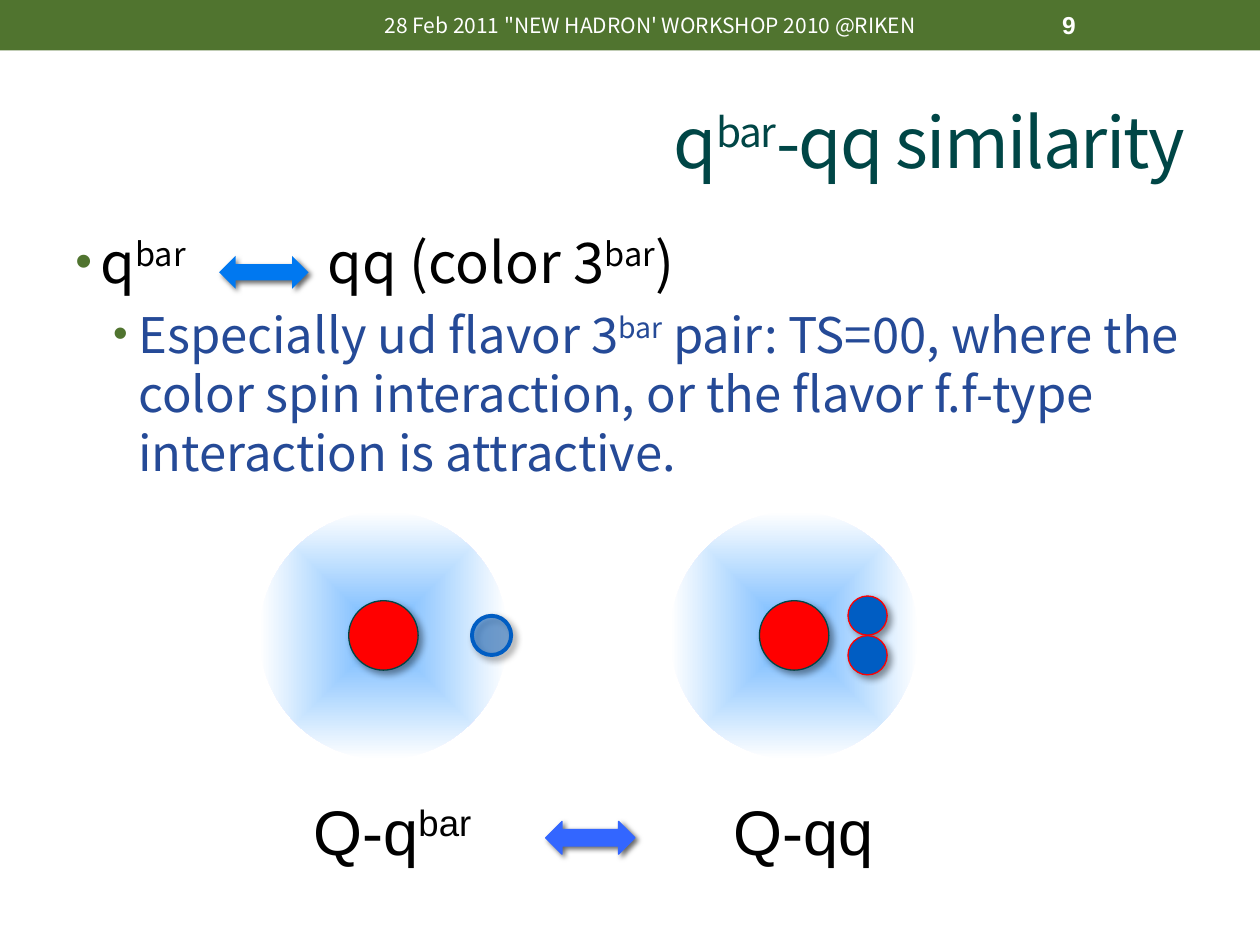
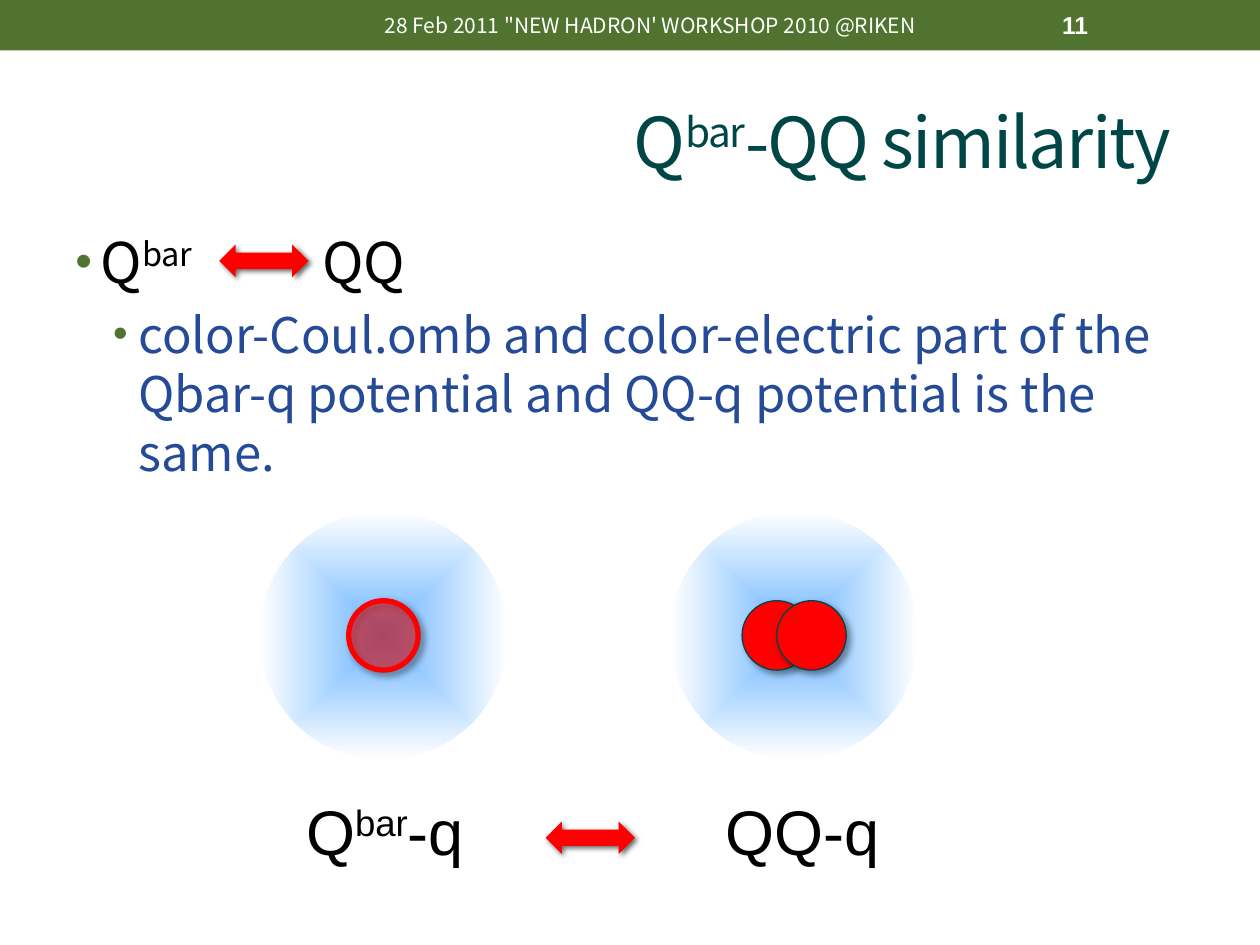
from dataclasses import dataclass

import pptx
import pptx.util
import pptx.dml.color
import pptx.enum.shapes
import pptx.enum.text
import pptx.oxml
import pptx.oxml.ns

Cm, Pt = pptx.util.Cm, pptx.util.Pt
SHAPE = pptx.enum.shapes.MSO_SHAPE
ALIGN = pptx.enum.text.PP_ALIGN
ANCHOR = pptx.enum.text.MSO_ANCHOR
DRAWING_NS = pptx.oxml.ns.nsdecls("a")
qn = pptx.oxml.ns.qn


@dataclass(frozen=True)
class Theme:
    text_font: str = "Noto Sans CJK JP"
    label_font: str = "Arial"
    green: str = "50742F"
    teal: str = "004646"
    navy: str = "254A97"
    black: str = "000000"
    white: str = "FFFFFF"
    halo: str = "69B4FF"
    heavy: str = "FF0000"
    light: str = "005DC3"
    sky: str = "0078F0"
    violet: str = "3366FF"
    title: int = 40
    topic: int = 32
    detail: int = 28
    label: int = 36
    footer: int = 12
    number: int = 14


THEME = Theme()
MEETING = "28 Feb 2011 \"NEW HADRON' WORKSHOP 2010 @RIKEN"
LEFT_SYSTEM, RIGHT_SYSTEM, SYSTEM_Y = 7.73, 16.01, 12.81
HALO_SIZE, HEAVY_SIZE, LIGHT_SIZE = 5, 1.4, 0.79
ARROW_SIZE = (1.8, 0.66)


def rgb(color):
    return pptx.dml.color.RGBColor.from_string(color)


def xml(markup):
    """Parse one DrawingML element; the first tag gets the namespace."""
    tag_end = min(i for i in (markup.find(" "), markup.find(">")) if i > 0)
    return pptx.oxml.parse_xml(f"{markup[:tag_end]} {DRAWING_NS}{markup[tag_end:]}")


# Text

def add_box(slide, left, top, width, height, anchor=ANCHOR.TOP):
    frame = slide.shapes.add_textbox(Cm(left), Cm(top), Cm(width), Cm(height)).text_frame
    frame.word_wrap = True
    frame.vertical_anchor = anchor
    return frame


def write(paragraph, text, size, color, font=THEME.text_font, bold=False, spacing=None):
    """Fill a paragraph; parts between ^ marks are raised."""
    for index, part in enumerate(text.split("^")):
        run = paragraph.add_run()
        run.text = part
        run.font.name, run.font.size, run.font.bold = font, Pt(size), bold
        run.font.color.rgb = rgb(color)
        properties = run.font._element
        if index % 2:
            properties.set("baseline", "30000")
        if spacing:
            properties.set("spc", str(spacing * 100))


def add_tab(paragraph, position):
    paragraph._p.get_or_add_pPr().append(
        xml(f'<a:tabLst ><a:tab pos="{Cm(position)}" algn="l"/></a:tabLst>'))


def add_bullet(paragraph, indent):
    properties = paragraph._p.get_or_add_pPr()
    properties.set("marL", str(Cm(indent)))
    properties.set("indent", str(-Cm(0.51)))
    for markup in (f'<a:buClr ><a:srgbClr val="{THEME.green}"/></a:buClr>',
                   '<a:buSzPct val="85000"/>',
                   '<a:buFont typeface="Arial"/>',
                   '<a:buChar char="•"/>'):
        properties.append(xml(markup))


def add_points(slide, topic, detail, topic_tab):
    frame = add_box(slide, 1.27, 4.45, 22.86, 13.54)
    first, second = frame.paragraphs[0], frame.add_paragraph()
    second.level = 1
    add_bullet(first, 0.51)
    add_bullet(second, 1.27)
    add_tab(first, topic_tab)
    second.space_before = Pt(0.2 * THEME.detail)
    for paragraph, text, size, color in ((first, topic, THEME.topic, THEME.black),
                                         (second, detail, THEME.detail, THEME.navy)):
        paragraph.line_spacing = Pt(round(size * 1.204, 1))
        write(paragraph, text, size, color)


def add_system_labels(slide, left, text):
    paragraph = add_box(slide, left, 15.85, 12.4, 1.8).paragraphs[0]
    add_tab(paragraph, 8.46)
    write(paragraph, text, THEME.label, THEME.black, THEME.label_font)


# Shapes

def add_solid(slide, kind, box, fill, line=None, line_width=0.75, opacity=None):
    shape = slide.shapes.add_shape(kind, *map(Cm, box))
    shape.shadow.inherit = False
    shape.fill.solid()
    shape.fill.fore_color.rgb = rgb(fill)
    if opacity:
        color = shape._element.spPr.find(f"{qn('a:solidFill')}/{qn('a:srgbClr')}")
        color.append(xml(f'<a:alpha val="{opacity * 1000}"/>'))
    if line:
        shape.line.color.rgb = rgb(line)
        shape.line.width = Pt(line_width)
    else:
        shape.line.fill.background()
    return shape


def cast_shadow(shape, opacity, blur, distance):
    shape._element.spPr.find(qn("a:effectLst")).append(xml(
        f'<a:outerShdw blurRad="{Pt(blur)}" dist="{Pt(distance)}" dir="2700000" '
        f'algn="tl" rotWithShape="0"><a:srgbClr val="{THEME.black}">'
        f'<a:alpha val="{opacity * 1000}"/></a:srgbClr></a:outerShdw>'))


def centred(x, y, size):
    return x - size / 2, y - size / 2, size, size


def add_halo(slide, x):
    halo = add_solid(slide, SHAPE.OVAL, centred(x, SYSTEM_Y, HALO_SIZE), THEME.halo)
    properties = halo._element.spPr
    properties.replace(properties.find(qn("a:solidFill")), xml(
        '<a:gradFill rotWithShape="1"><a:gsLst>'
        f'<a:gs pos="0"><a:srgbClr val="{THEME.halo}"/></a:gs>'
        f'<a:gs pos="100000"><a:srgbClr val="{THEME.white}"/></a:gs></a:gsLst>'
        '<a:path path="shape"><a:fillToRect l="50000" t="50000" r="50000" b="50000"/>'
        '</a:path></a:gradFill>'))


def add_quark(slide, x, y, size, fill, line, line_width=0.75, opacity=None):
    quark = add_solid(slide, SHAPE.OVAL, centred(x, y, size), fill, line, line_width, opacity)
    cast_shadow(quark, 40, 4, 3)


def add_heavy_quark(slide, x):
    add_quark(slide, x, SYSTEM_Y, HEAVY_SIZE, THEME.heavy, THEME.teal)


def add_similarity_arrow(slide, left, top, color, line=None):
    arrow = add_solid(slide, SHAPE.LEFT_RIGHT_ARROW, (left, top, *ARROW_SIZE), color, line)
    cast_shadow(arrow, 60, 3, 2)


# Slides

def add_similarity_slide(deck, number, title):
    """Blank slide with the header band, the title and both halos."""
    slide = deck.slides.add_slide(deck.slide_layouts[6])
    add_solid(slide, SHAPE.RECTANGLE, (0, 0, 25.4, 1.02), THEME.green)

    meeting = add_box(slide, 5.26, 0.05, 15.7, 0.91, ANCHOR.MIDDLE).paragraphs[0]
    meeting.alignment = ALIGN.CENTER
    write(meeting, MEETING, THEME.footer, THEME.white)
    page = add_box(slide, 21.16, 0.05, 2.97, 0.91, ANCHOR.MIDDLE).paragraphs[0]
    write(page, str(number), THEME.number, THEME.white, THEME.label_font, bold=True)

    heading = add_box(slide, 2.03, 1.47, 22.1, 2.74, ANCHOR.MIDDLE).paragraphs[0]
    heading.alignment = ALIGN.RIGHT
    write(heading, title, THEME.title, THEME.teal, spacing=-1)

    for x in (LEFT_SYSTEM, RIGHT_SYSTEM):
        add_halo(slide, x)
    return slide


def build_light_diquark(deck):
    slide = add_similarity_slide(deck, 9, "q^bar^-qq similarity")
    add_points(slide, "q^bar^\tqq (color 3^bar^)",
               "Especially ud flavor 3^bar^ pair: TS=00, where the color spin "
               "interaction, or the flavor f.f-type interaction is attractive.", 5.08)
    add_similarity_arrow(slide, 4.42, 5.16, THEME.sky)
    for x in (LEFT_SYSTEM, RIGHT_SYSTEM):
        add_heavy_quark(slide, x)
    # Light pair on the right, light antiquark on the left
    for side in (-1, 1):
        add_quark(slide, RIGHT_SYSTEM + 1.48, SYSTEM_Y + side * 0.4, LIGHT_SIZE,
                  THEME.light, THEME.heavy)
    add_quark(slide, LEFT_SYSTEM + 2.18, SYSTEM_Y, LIGHT_SIZE,
              THEME.light, THEME.light, 2.25, opacity=45)
    add_system_labels(slide, 6.07, "Q-q^bar^\tQ-qq")
    add_similarity_arrow(slide, 11, 16.56, THEME.violet, THEME.violet)


def build_heavy_diquark(deck):
    slide = add_similarity_slide(deck, 11, "Q^bar^-QQ similarity ")
    add_points(slide, "Q^bar^\tQQ",
               "color-Coul.omb and color-electric part of the Qbar-q potential "
               "and QQ-q potential is the same.", 4.98)
    add_similarity_arrow(slide, 4.42, 4.93, THEME.heavy)
    # Heavy antiquark on the left, overlapping heavy pair on the right
    add_quark(slide, LEFT_SYSTEM, SYSTEM_Y, HEAVY_SIZE,
              THEME.heavy, THEME.heavy, 3, opacity=50)
    for side in (-1, 1):
        add_heavy_quark(slide, RIGHT_SYSTEM + side * 0.35)
    add_system_labels(slide, 5.92, "Q^bar^-q\tQQ-q")
    add_similarity_arrow(slide, 11, 16.56, THEME.heavy)


def main():
    deck = pptx.Presentation()
    deck.slide_width, deck.slide_height = Cm(25.4), Cm(19.05)
    build_light_diquark(deck)
    build_heavy_diquark(deck)
    deck.save("out.pptx")


if __name__ == "__main__":
    main()
